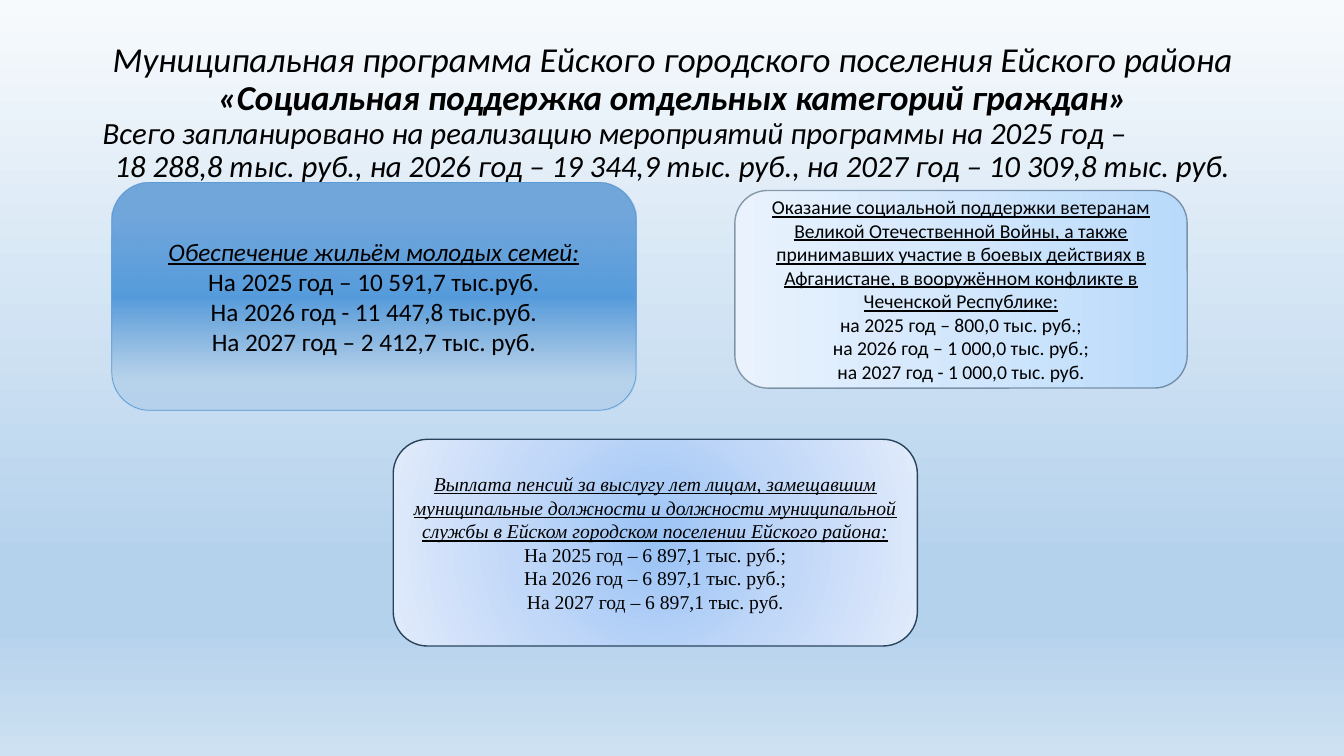
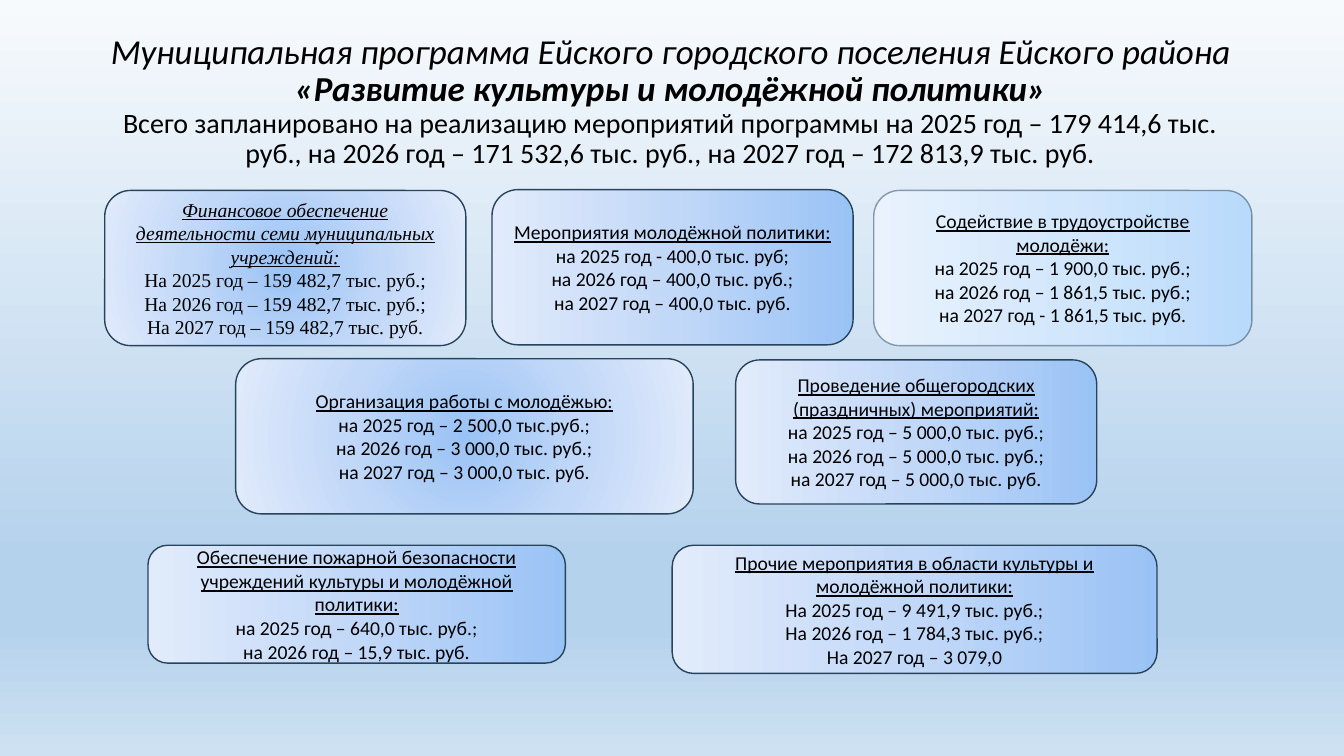
from lxml import etree
from pptx import Presentation
from pptx import util as u
from pptx.dml.color import RGBColor
from pptx.enum import shapes, text
from pptx.oxml import ns

LEFT, CENTER = text.PP_ALIGN.LEFT, text.PP_ALIGN.CENTER
SOFT_BLUE = [(0, "9AC3F5"), (50, "C2D8F8"), (100, "E1EBFB")]

# Gradient stops are (position %, colour) with an optional opacity %.
# An angle of None means a circular gradient.
THEME = {
    "ink": "000000",
    "sans": "Calibri",
    "serif": "Times New Roman",
    "title": 25,
    "lead": 18,
    "body": 14,
    "title_spacing": 0.9,
    "background": {
        "stops": [(0, "F7FAFD"), (74, "B5D2EC"), (83, "B5D2EC"), (100, "CEE1F2")],
        "angle": 90,
    },
    "cards": {
        "deep": {
            "stops": [(15, "71A6DB"), (50, "559BDB"), (86, "5B98D0", 16)],
            "angle": 90, "line": "5B9BD5", "width": 0.5, "opacity": 100,
        },
        "pale": {
            "stops": [(0, "B9DAFB"), (50, "D3E7FC"), (100, "E9F2FD")],
            "angle": 180, "line": "28445D", "width": 1, "opacity": 49,
        },
        "soft": {
            "stops": SOFT_BLUE,
            "angle": 180, "line": "28445D", "width": 1, "opacity": 100,
        },
        "glow": {
            "stops": SOFT_BLUE,
            "angle": None, "line": "28445D", "width": 1, "opacity": 100,
        },
    },
}

PROGRAMME = "Муниципальная программа Ейского городского поселения Ейского района"

# Each card: style, (left, top, width, height) in cm, text format, heading, amounts.
PLAIN = {"size": THEME["body"], "name": THEME["sans"], "italic": False}
LEAD = {"size": THEME["lead"], "name": THEME["sans"], "italic": True}
SERIF = {"size": THEME["body"], "name": THEME["serif"], "italic": True}

PAGES = [
    {
        "title_at": (2.34, 0.36),
        "name": "«Социальная поддержка отдельных категорий граждан»",
        "summary": [
            ("Всего запланировано на реализацию мероприятий программы на 2025 год –", LEFT),
            ("18 288,8 тыс. руб., на 2026 год – 19 344,9 тыс. руб., "
             "на 2027 год – 10 309,8 тыс. руб.", CENTER),
        ],
        "summary_format": {"size": 22, "italic": True},
        "cards": [
            ("deep", (2.82, 4.6, 13.21, 5.74), LEAD,
             "Обеспечение жильём молодых семей:",
             ["На 2025 год – 10 591,7 тыс.руб.",
              "На 2026 год - 11 447,8 тыс.руб.",
              "На 2027 год – 2 412,7 тыс. руб."]),
            ("pale", (18.52, 4.8, 11.4, 4.98), PLAIN,
             "Оказание социальной поддержки ветеранам Великой Отечественной Войны, "
             "а также принимавших участие в боевых действиях в Афганистане, "
             "в вооружённом конфликте в Чеченской Республике:",
             ["на 2025 год – 800,0 тыс. руб.;",
              "на 2026 год – 1 000,0 тыс. руб.;",
              "на 2027 год - 1 000,0 тыс. руб."]),
            ("glow", (9.91, 11.07, 13.21, 5.21), SERIF,
             "Выплата пенсий за выслугу лет лицам, замещавшим муниципальные должности "
             "и должности муниципальной службы в Ейском городском поселении "
             "Ейского района:",
             ["На 2025 год – 6 897,1 тыс. руб.;",
              "На 2026 год – 6 897,1 тыс. руб.;",
              "На 2027 год – 6 897,1 тыс. руб."]),
        ],
    },
    {
        "title_at": (2.29, 0.08),
        "name": "«Развитие культуры и молодёжной политики»",
        "summary": [
            ("Всего запланировано на реализацию мероприятий программы "
             "на 2025 год – 179 414,6 тыс. руб., на 2026 год – 171 532,6 тыс. руб., "
             "на 2027 год – 172 813,9 тыс. руб.", CENTER),
        ],
        "summary_format": {"size": 20, "italic": False},
        "cards": [
            ("glow", (2.64, 4.8, 9.1, 3.91), SERIF,
             "Финансовое обеспечение деятельности семи муниципальных учреждений:",
             ["На 2025 год – 159 482,7 тыс. руб.;",
              "На 2026 год – 159 482,7 тыс. руб.;",
              "На 2027 год – 159 482,7 тыс. руб."]),
            ("soft", (12.4, 4.78, 9.1, 3.91), PLAIN,
             "Мероприятия молодёжной политики:",
             ["на 2025 год - 400,0 тыс. руб;",
              "на 2026 год – 400,0 тыс. руб.;",
              "на 2027 год – 400,0 тыс. руб."]),
            ("pale", (22.02, 4.8, 9.53, 3.91), PLAIN,
             "Содействие в трудоустройстве молодёжи:",
             ["на 2025 год – 1 900,0 тыс. руб.;",
              "на 2026 год – 1 861,5 тыс. руб.;",
              "на 2027 год - 1 861,5 тыс. руб."]),
            ("glow", (5.94, 9.04, 11.53, 3.91), PLAIN,
             "Организация работы с молодёжью:",
             ["на 2025 год – 2 500,0 тыс.руб.;",
              "на 2026 год – 3 000,0 тыс. руб.;",
              "на 2027 год – 3 000,0 тыс. руб."]),
            ("soft", (18.54, 9.07, 9.1, 3.63), PLAIN,
             "Проведение общегородских (праздничных) мероприятий:",
             ["на 2025 год – 5 000,0 тыс. руб.;",
              "на 2026 год – 5 000,0 тыс. руб.;",
              "на 2027 год – 5 000,0 тыс. руб."]),
            ("soft", (3.73, 13.74, 10.52, 2.97), PLAIN,
             "Обеспечение пожарной безопасности учреждений культуры "
             "и молодёжной политики:",
             ["на 2025 год – 640,0 тыс. руб.;",
              "на 2026 год – 15,9 тыс. руб."]),
            ("soft", (16.94, 13.74, 12.22, 3.23), PLAIN,
             "Прочие мероприятия в области культуры и молодёжной политики:",
             ["На 2025 год – 9 491,9 тыс. руб.;",
              "На 2026 год – 1 784,3 тыс. руб.;",
              "На 2027 год – 3 079,0"]),
        ],
    },
]


def paint_gradient(fill, element, stops, angle):
    """Give fill, which belongs to element, any number of stops."""
    fill.gradient()
    gradient = next(element.iter(ns.qn("a:gradFill")))
    gradient.clear()
    gradient.set("rotWithShape", "1")
    stop_list = etree.SubElement(gradient, ns.qn("a:gsLst"))
    for position, colour, *opacity in stops:
        stop = etree.SubElement(stop_list, ns.qn("a:gs"), pos=str(position * 1000))
        tint = etree.SubElement(stop, ns.qn("a:srgbClr"), val=colour)
        for percent in opacity:
            etree.SubElement(tint, ns.qn("a:alpha"), val=str(percent * 1000))
    if angle is None:
        circle = etree.SubElement(gradient, ns.qn("a:path"), path="circle")
        middle = {side: "50000" for side in "ltrb"}
        etree.SubElement(circle, ns.qn("a:fillToRect"), middle)
    else:
        etree.SubElement(gradient, ns.qn("a:lin"), ang=str(angle * 60000), scaled="0")


def write_paragraphs(box, rows, spacing=1.0):
    """Fill box with rows of (words, alignment, font format)."""
    frame = box.text_frame
    frame.word_wrap = True
    frame.vertical_anchor = text.MSO_ANCHOR.MIDDLE
    for index, (words, alignment, font_format) in enumerate(rows):
        para = frame.add_paragraph() if index else frame.paragraphs[0]
        para.alignment = alignment
        para.line_spacing = spacing
        span = para.add_run()
        span.text = words
        span.font.color.rgb = RGBColor.from_string(THEME["ink"])
        for attribute, value in font_format.items():
            setattr(span.font, attribute, u.Pt(value) if attribute == "size" else value)


deck = Presentation()
deck.slide_width, deck.slide_height = u.Cm(33.87), u.Cm(19.05)
master = deck.slide_master
paint_gradient(master.background.fill, master.element, **THEME["background"])

title_format = {"size": THEME["title"], "name": THEME["sans"], "italic": True}

for content in PAGES:
    page = deck.slides.add_slide(deck.slide_layouts[6])

    left, top = content["title_at"]
    title = page.shapes.add_textbox(u.Cm(left), u.Cm(top), u.Cm(29.21), u.Cm(4.98))
    summary_format = {**title_format, **content["summary_format"]}
    title_rows = [
        (PROGRAMME, CENTER, title_format),
        (content["name"], CENTER, {**title_format, "bold": True}),
    ]
    title_rows += [(words, side, summary_format) for words, side in content["summary"]]
    write_paragraphs(title, title_rows, THEME["title_spacing"])

    for style_name, position, font_format, heading, amounts in content["cards"]:
        style = THEME["cards"][style_name]
        card = page.shapes.add_shape(
            shapes.MSO_SHAPE.ROUNDED_RECTANGLE, *map(u.Cm, position))
        card.shadow.inherit = False
        paint_gradient(card.fill, card.element, style["stops"], style["angle"])
        card.line.width = u.Pt(style["width"])
        card.line.color.rgb = RGBColor.from_string(style["line"])
        if style["opacity"] < 100:
            outline = next(card.element.iter(ns.qn("a:ln")))
            ink = next(outline.iter(ns.qn("a:srgbClr")))
            etree.SubElement(ink, ns.qn("a:alpha"), val=str(style["opacity"] * 1000))

        card_rows = [(heading, CENTER, {**font_format, "underline": True})]
        card_rows += [(amount, CENTER, {**font_format, "italic": False})
                      for amount in amounts]
        write_paragraphs(card, card_rows)

deck.save("out.pptx")
